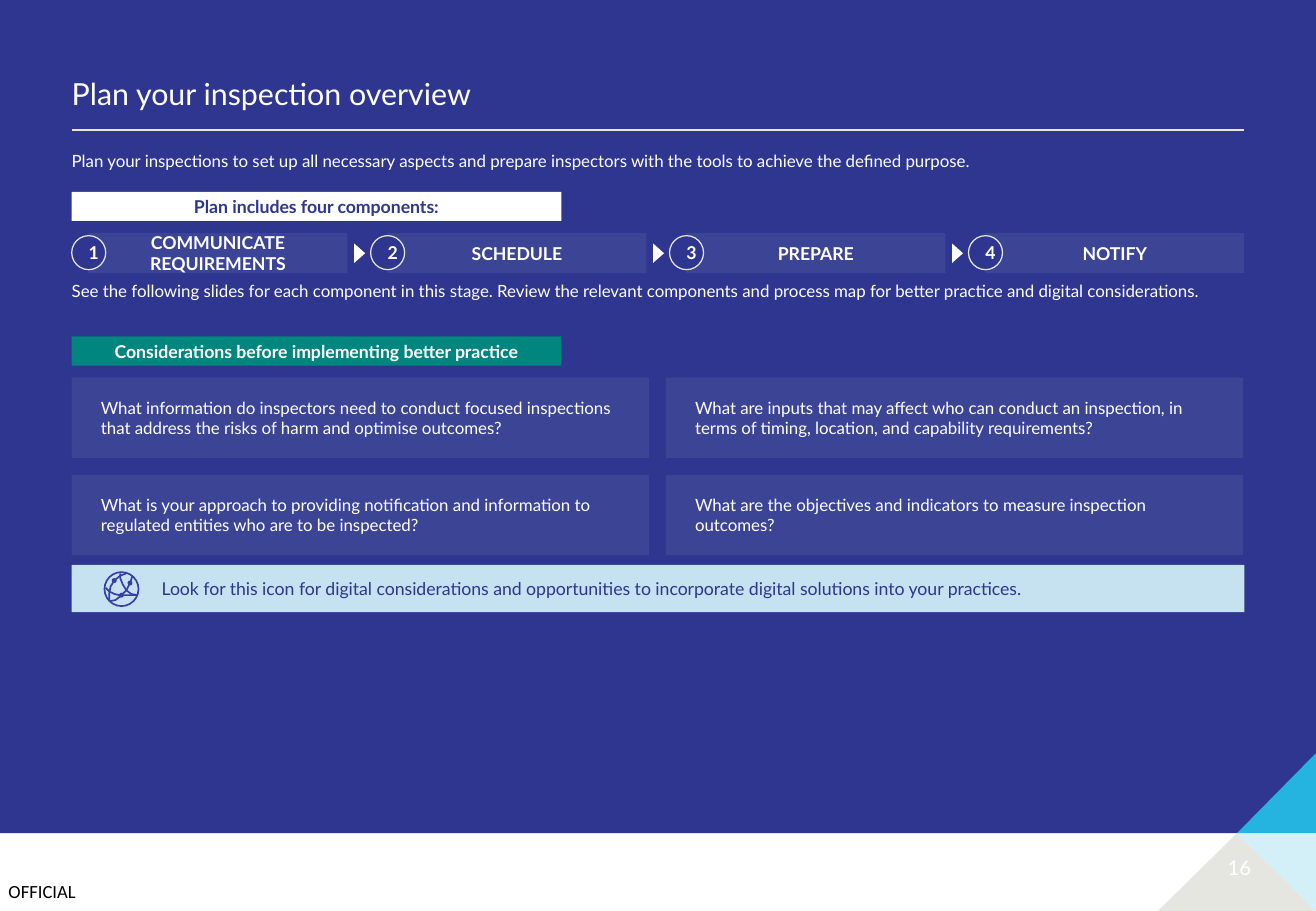
from lxml.etree import SubElement
from pptx import Presentation
from pptx.dml.color import RGBColor
from pptx.enum.shapes import MSO_CONNECTOR, MSO_SHAPE
from pptx.enum.text import MSO_ANCHOR, MSO_AUTO_SIZE, PP_ALIGN
from pptx.oxml.ns import qn
from pptx.util import Inches, Pt

NAVY = RGBColor(0x2E, 0x36, 0x8F)
WHITE = RGBColor(0xFF, 0xFF, 0xFF)
BLACK = RGBColor(0x00, 0x00, 0x00)
STONE = RGBColor(0xE6, 0xE6, 0xE1)
PALE_BLUE = RGBColor(0xD3, 0xF0, 0xF9)
SKY = RGBColor(0x25, 0xB3, 0xE0)
TEAL = RGBColor(0x00, 0x86, 0x7F)
ICON_BLUE = RGBColor(0x36, 0x3F, 0xA7)

SLIDE_W, SLIDE_H = 10.83, 7.5
LEFT, RIGHT = 0.59, 10.24
CONTENT_W = RIGHT - LEFT
FOOTER_TOP = 6.86

STEPS = ["COMMUNICATE REQUIREMENTS", "SCHEDULE", "PREPARE", "NOTIFY"]
QUESTIONS = [
    "What information do inspectors need to conduct focused inspections that address "
    "the risks of harm and optimise outcomes?",
    "What are inputs that may affect who can conduct an inspection, in terms of timing, "
    "location, and capability requirements?",
    "What is your approach to providing notification and information to regulated "
    "entities who are to be inspected?",
    "What are the objectives and indicators to measure inspection outcomes?",
]


def write(shape, text, size, color=WHITE, bold=False, align=PP_ALIGN.LEFT,
          anchor=MSO_ANCHOR.MIDDLE, side=0.1, edge=0.05, font="Lato"):
    """Fill a shape with one paragraph; side and edge are its insets in inches."""
    frame = shape.text_frame
    frame.word_wrap = True
    frame.auto_size = MSO_AUTO_SIZE.NONE
    frame.vertical_anchor = anchor
    frame.margin_left = frame.margin_right = Inches(side)
    frame.margin_top = frame.margin_bottom = Inches(edge)
    paragraph = frame.paragraphs[0]
    paragraph.text = text
    paragraph.alignment = align
    paragraph.space_before = Pt(0)
    paragraph.font.name = font
    paragraph.font.size = Pt(size)
    paragraph.font.bold = bold
    paragraph.font.color.rgb = color
    return paragraph


def add_block(slide, preset, left, top, width, height, fill, alpha=None):
    """Add a flat shape without outline; alpha is its opacity in percent."""
    block = slide.shapes.add_shape(
        preset, Inches(left), Inches(top), Inches(width), Inches(height))
    block.shadow.inherit = False
    block.fill.solid()
    block.fill.fore_color.rgb = fill
    block.line.fill.background()
    if alpha is not None:
        color = block._element.spPr.find(qn("a:solidFill"))[0]
        SubElement(color, qn("a:alpha")).set("val", str(alpha * 1000))
    return block


def add_text(slide, left, top, width, height, text, size, **style):
    box = slide.shapes.add_textbox(
        Inches(left), Inches(top), Inches(width), Inches(height))
    return write(box, text, size, side=0, **style)


def add_outline(slide, points, closed):
    start, *rest = [(Inches(x), Inches(y)) for x, y in points]
    builder = slide.shapes.build_freeform(*start)
    builder.add_line_segments(rest, close=closed)
    outline = builder.convert_to_shape()
    outline.shadow.inherit = False
    return outline


def fill_placeholder(shape, top, height, text, size, anchor):
    shape.left, shape.top = Inches(LEFT), Inches(top)
    shape.width, shape.height = Inches(CONTENT_W), Inches(height)
    properties = shape.text_frame.paragraphs[0]._p.get_or_add_pPr()
    properties.set("marL", "0")
    properties.set("indent", "0")
    SubElement(properties, qn("a:buNone"))
    return write(shape, text, size, anchor=anchor, side=0)


def add_background(slide):
    panel = add_block(slide, MSO_SHAPE.RECTANGLE, 0, 0, SLIDE_W, FOOTER_TOP, NAVY)
    slide.shapes._spTree.insert(2, panel._element)  # behind the placeholders

    rule = slide.shapes.add_connector(
        MSO_CONNECTOR.STRAIGHT, Inches(LEFT), Inches(1.07), Inches(RIGHT), Inches(1.07))
    rule.line.color.rgb = STONE
    rule.line.width = Pt(1.25)
    SubElement(rule._element.spPr, qn("a:effectLst"))

    peak = (10.18, FOOTER_TOP)
    corner, edge = (SLIDE_W, SLIDE_H), (SLIDE_W, FOOTER_TOP)
    for points, color in [
        ([peak, (9.53, SLIDE_H), corner], STONE),
        ([edge, peak, corner], PALE_BLUE),
        ([(SLIDE_W, 6.2), peak, edge], SKY),
    ]:
        triangle = add_outline(slide, points, closed=True)
        triangle.fill.solid()
        triangle.fill.fore_color.rgb = color
        triangle.line.fill.background()


def add_heading(slide, top, text, fill, color):
    bar = add_block(slide, MSO_SHAPE.RECTANGLE, LEFT, top, 4.03, 0.24, fill)
    write(bar, text, 10.5, color, bold=True, align=PP_ALIGN.CENTER, side=0.04)


def add_steps(slide):
    step_w = 2.27
    pitch = (CONTENT_W - step_w) / (len(STEPS) - 1)
    for index, name in enumerate(STEPS):
        left = LEFT + index * pitch
        bar = add_block(slide, MSO_SHAPE.RECTANGLE, left + 0.14, 1.92,
                        step_w - 0.14, 0.33, WHITE, alpha=7)
        write(bar, name, 10.5, bold=True, align=PP_ALIGN.CENTER)
        badge = add_block(slide, MSO_SHAPE.OVAL, left, 1.94, 0.28, 0.28, NAVY)
        badge.line.color.rgb = STONE
        badge.line.width = Pt(0.75)
        write(badge, str(index + 1), 10.5, bold=True, align=PP_ALIGN.CENTER)
        if index:
            arrow = add_block(slide, MSO_SHAPE.ISOSCELES_TRIANGLE,
                              left - 0.17, 2.04, 0.16, 0.09, WHITE)
            arrow.rotation = 90


def add_questions(slide):
    for index, question in enumerate(QUESTIONS):
        row, column = divmod(index, 2)
        card = add_block(slide, MSO_SHAPE.RECTANGLE, LEFT + column * 4.89,
                         3.11 + row * 0.8, 4.75, 0.66, WHITE, alpha=7)
        write(card, question, 10, side=0.24)


def add_network_icon(slide):
    globe = add_block(slide, MSO_SHAPE.OVAL, 0.86, 4.71, 0.28, 0.28, PALE_BLUE)
    globe.fill.background()
    threads = [
        [(0.99, 4.72), (0.99, 4.76), (1.01, 4.81), (1.04, 4.86), (1.08, 4.89), (1.13, 4.9)],
        [(0.87, 4.84), (0.9, 4.87), (0.94, 4.89), (0.98, 4.9), (1.04, 4.9), (1.12, 4.9)],
        [(1.09, 4.74), (1.07, 4.8), (1.04, 4.86), (0.99, 4.91), (0.95, 4.94), (0.9, 4.95)],
        [(1.04, 4.72), (0.99, 4.74), (0.94, 4.78), (0.91, 4.83), (0.9, 4.88), (0.9, 4.94)],
    ]
    lines = [globe]
    for points in threads:
        thread = add_outline(slide, points, closed=False)
        thread.fill.background()
        lines.append(thread)
    for shape in lines:
        shape.line.color.rgb = ICON_BLUE
        shape.line.width = Pt(1)
    for x, y in [(0.94, 4.78), (1.07, 4.8), (1, 4.9)]:
        add_block(slide, MSO_SHAPE.OVAL, x - 0.02, y - 0.02, 0.04, 0.04, ICON_BLUE)


def add_digital_note(slide):
    banner = add_block(slide, MSO_SHAPE.RECTANGLE, LEFT, 4.65, CONTENT_W, 0.39,
                       PALE_BLUE, alpha=92)
    write(banner, "Look for this icon for digital considerations and opportunities to "
          "incorporate digital solutions into your practices.", 10.5, NAVY, edge=0.08)
    banner.text_frame.margin_left = Inches(0.74)
    add_network_icon(slide)


def main():
    deck = Presentation()
    deck.slide_width, deck.slide_height = Inches(SLIDE_W), Inches(SLIDE_H)
    slide = deck.slides.add_slide(deck.slide_layouts[1])
    add_background(slide)

    title = fill_placeholder(slide.shapes.title, 0.59, 0.38,
                             "Plan your inspection overview", 18, MSO_ANCHOR.BOTTOM)
    title.line_spacing = 0.9
    fill_placeholder(slide.placeholders[1], 1.19, 0.38,
                     "Plan your inspections to set up all necessary aspects and prepare "
                     "inspectors with the tools to achieve the defined purpose.",
                     10, MSO_ANCHOR.TOP)

    add_heading(slide, 1.58, "Plan includes four components:", WHITE, NAVY)
    add_steps(slide)
    add_text(slide, LEFT, 2.26, CONTENT_W, 0.5,
             "See the following slides for each component in this stage. Review the relevant "
             "components and process map for better practice and digital considerations.",
             10, anchor=MSO_ANCHOR.TOP)
    add_heading(slide, 2.77, "Considerations before implementing better practice", TEAL, WHITE)
    add_questions(slide)
    add_digital_note(slide)

    add_text(slide, 0.07, 7.25, 0.7, 0.18, "OFFICIAL", 11,
             color=BLACK, edge=0, font="Calibri")
    add_text(slide, 10, 7.02, 0.4, 0.25, "16", 12, align=PP_ALIGN.CENTER, edge=0)
    deck.save("out.pptx")


if __name__ == "__main__":
    main()
